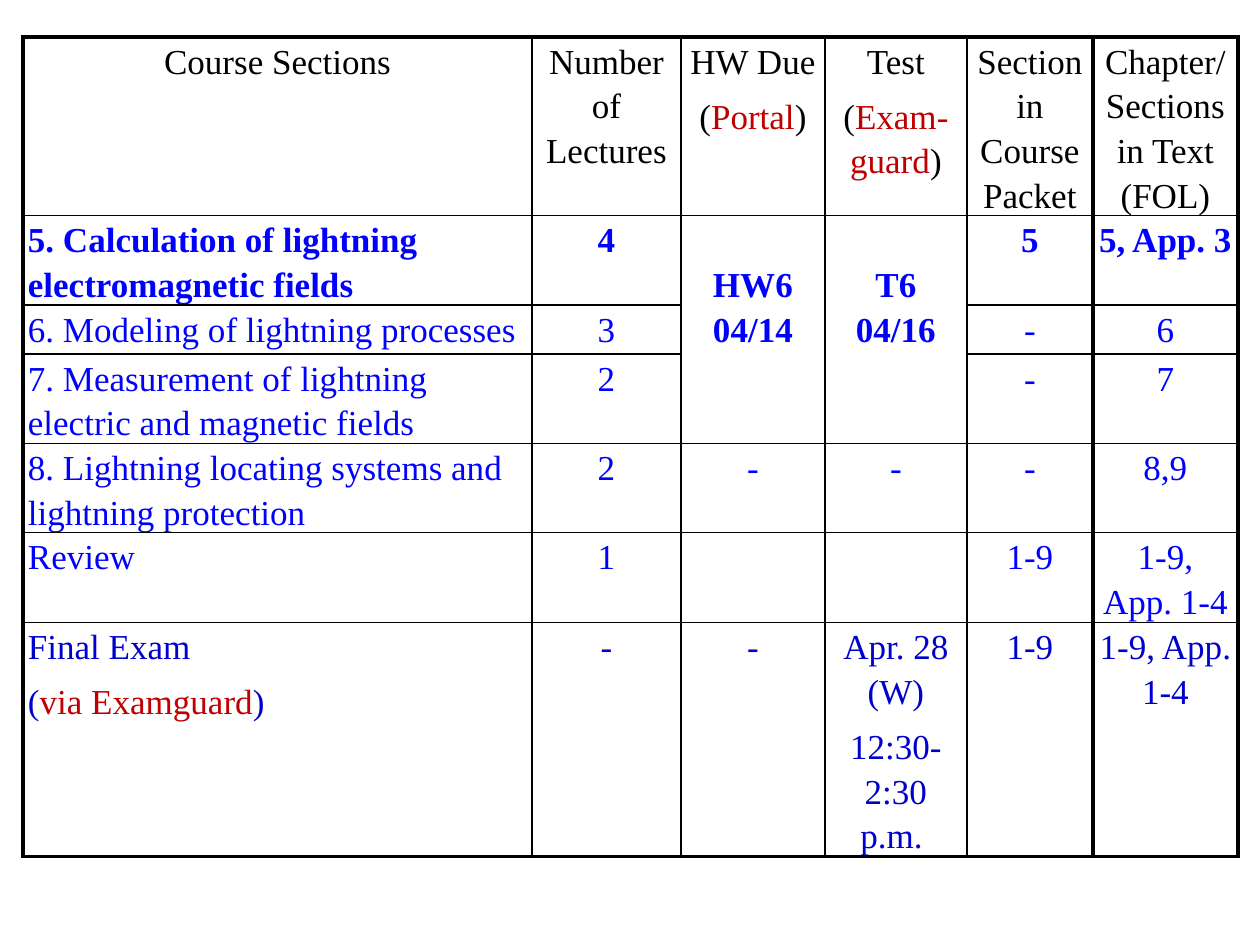
"""Build the course schedule slide as one bordered table."""
import dataclasses

import lxml.etree
import pptx
import pptx.dml.color
import pptx.enum.text
import pptx.oxml.ns
import pptx.table
import pptx.util

RGB = pptx.dml.color.RGBColor
ALIGN = pptx.enum.text.PP_ALIGN
BLACK = RGB(0x00, 0x00, 0x00)
WHITE = RGB(0xFF, 0xFF, 0xFF)
RED = RGB(0xC0, 0x00, 0x00)
BLUE = RGB(0x00, 0x00, 0xFF)
NAVY = RGB(0x00, 0x00, 0xCC)
PX = 914400 / 126
COLUMN_WIDTHS = (509, 149, 144, 142, 126, 145)
THIN, THICK = 1, 2.25
THICK_COLUMN_EDGES = (0, 5, 6)
THICK_ROW_EDGES = (0, 7)
MERGED_COLUMNS = (2, 3)
MERGED_ROWS = (1, 3)


@dataclasses.dataclass(frozen=True)
class Entry:
    """Text of one cell; the part between bars is red."""
    paragraphs: tuple[str, ...]
    gap: int = 6
    top: int = 0


@dataclasses.dataclass(frozen=True)
class ScheduleRow:
    """One table row with its height and shared text format."""
    height: int
    entries: tuple[Entry, ...]
    color: RGB = BLUE
    bold: bool = False


def entry(*paragraphs: str, gap: int = 6, top: int = 0) -> Entry:
    """Make an entry from its paragraphs."""
    return Entry(paragraphs, gap, top)


EMPTY = entry()
DASH = entry("-")
ROWS = (
    ScheduleRow(177, (
        entry("Course Sections"), entry("Number of Lectures"),
        entry("HW Due", "(|Portal|)"), entry("Test", "(|Exam-guard|)"),
        entry("Section in Course Packet"),
        entry("Chapter/Sections in Text (FOL)")), BLACK),
    ScheduleRow(89, (
        entry("5. Calculation of lightning electromagnetic fields"),
        entry("4"), entry("HW6", "04/14", gap=0, top=45),
        entry("T6", "04/16", gap=0, top=45),
        entry("5"), entry("5, App. 3")), bold=True),
    ScheduleRow(49, (
        entry("6. Modeling of lightning processes"),
        entry("3"), EMPTY, EMPTY, DASH, entry("6"))),
    ScheduleRow(89, (
        entry("7. Measurement of lightning electric and magnetic fields"),
        entry("2"), EMPTY, EMPTY, DASH, entry("7"))),
    ScheduleRow(89, (
        entry("8. Lightning locating systems and lightning protection"),
        entry("2"), DASH, DASH, DASH, entry("8,9"))),
    ScheduleRow(90, (
        entry("Review"), entry("1"), EMPTY, EMPTY, entry("1-9"),
        entry("1-9,", "App. 1-4", gap=0))),
    ScheduleRow(234, (
        entry("Final Exam", "(|via Examguard|)"), DASH, DASH,
        entry("Apr. 28 (W)", "12:30-2:30 p.m. "),
        entry("1-9"), entry("1-9, App. 1-4")), NAVY),
)


def px(length: int) -> pptx.util.Emu:
    """Turn pixels into EMU."""
    return pptx.util.Emu(round(length * PX))


def apply(target: object, values: dict[str, object]) -> None:
    """Set every named attribute on the target."""
    for name, value in values.items():
        setattr(target, name, value)


def draw_borders(cell: pptx.table._Cell, row: int, column: int) -> None:
    """Rule the cell, with thick lines on the outer and last column edges."""
    edges = {
        "lnL": column in THICK_COLUMN_EDGES,
        "lnR": column + 1 in THICK_COLUMN_EDGES,
    }
    if not cell.is_spanned:
        edges["lnT"] = row in THICK_ROW_EDGES
        edges["lnB"] = row + 1 in THICK_ROW_EDGES
    qn = pptx.oxml.ns.qn
    properties = cell._tc.get_or_add_tcPr()
    for tag, thick in edges.items():
        width = pptx.util.Pt(THICK if thick else THIN)
        line = lxml.etree.SubElement(properties, qn(f"a:{tag}"), w=str(width))
        fill = lxml.etree.SubElement(line, qn("a:solidFill"))
        lxml.etree.SubElement(fill, qn("a:srgbClr"), val=str(BLACK))


def write_entry(cell: pptx.table._Cell, item: Entry, line: ScheduleRow,
                align: ALIGN) -> None:
    """Write the paragraphs of an entry into its cell."""
    apply(cell, {"margin_left": px(5), "margin_right": px(5),
                 "margin_top": px(item.top), "margin_bottom": 0})
    for index, text in enumerate(item.paragraphs):
        frame = cell.text_frame
        para = frame.add_paragraph() if index else frame.paragraphs[0]
        apply(para, {"alignment": align, "line_spacing": 1.15,
                     "space_before": pptx.util.Pt(item.gap if index else 0)})
        for part, words in enumerate(text.split("|")):
            span = para.add_run()
            span.text = words
            apply(span.font, {"name": "Times New Roman", "bold": line.bold,
                              "size": pptx.util.Pt(20)})
            span.font.color.rgb = RED if part % 2 else line.color


def draw_schedule(page: pptx.slide.Slide) -> None:
    """Draw the whole schedule table."""
    heights = [line.height for line in ROWS]
    table = page.shapes.add_table(
        len(ROWS), len(COLUMN_WIDTHS), px(23), px(37),
        px(sum(COLUMN_WIDTHS)), px(sum(heights))).table
    apply(table, {"first_row": False, "horz_banding": False})
    for column, width in zip(table.columns, COLUMN_WIDTHS):
        column.width = px(width)
    first, last = MERGED_ROWS
    for column in MERGED_COLUMNS:
        table.cell(first, column).merge(table.cell(last, column))
    for row, line in enumerate(ROWS):
        table.rows[row].height = px(line.height)
        for column, item in enumerate(line.entries):
            cell = table.cell(row, column)
            draw_borders(cell, row, column)
            cell.fill.solid()
            cell.fill.fore_color.rgb = WHITE
            align = ALIGN.CENTER if column or not row else ALIGN.LEFT
            write_entry(cell, item, line, align)


def main() -> None:
    """Build and save the deck."""
    deck = pptx.Presentation()
    apply(deck, {"slide_width": px(1260), "slide_height": px(945)})
    draw_schedule(deck.slides.add_slide(deck.slide_layouts[6]))
    deck.save("out.pptx")


if __name__ == "__main__":
    main()
